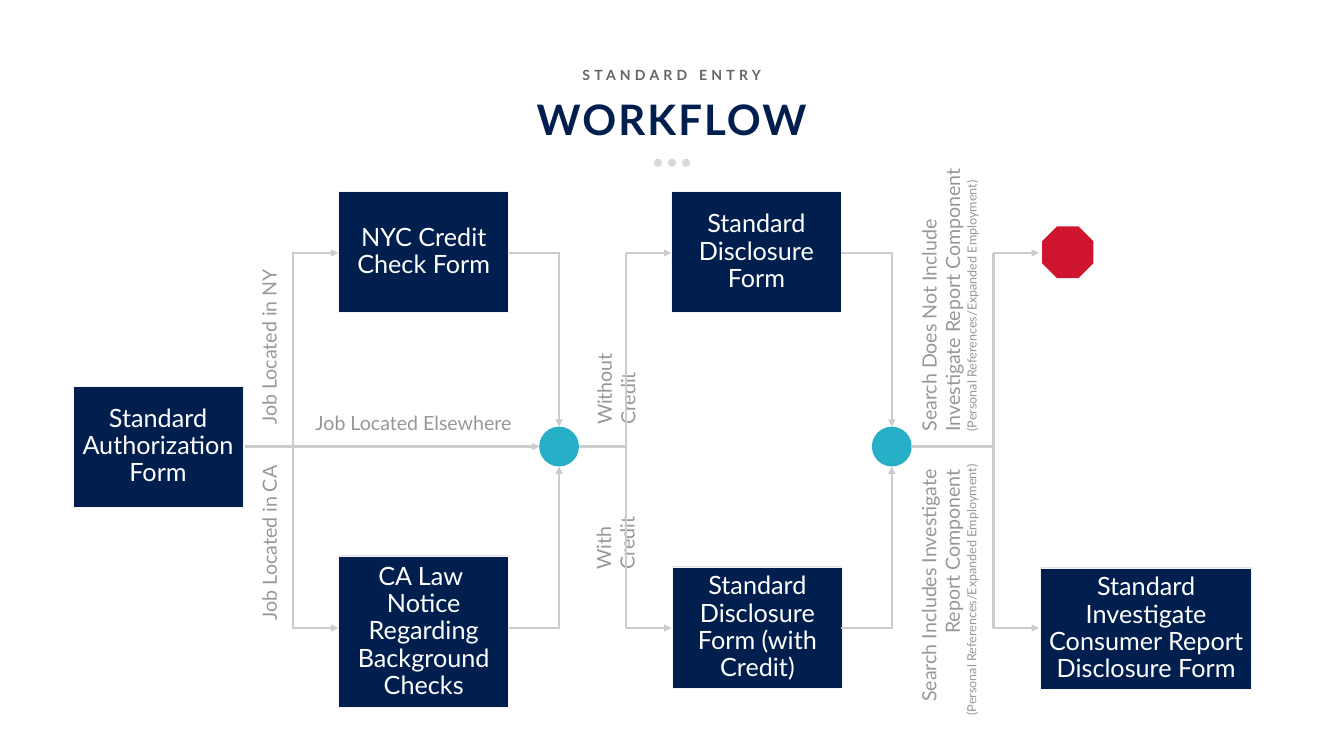
"""Build the standard entry workflow slide."""
import dataclasses

import pptx
import pptx.dml.color
import pptx.enum.shapes
import pptx.enum.text
import pptx.oxml.ns
import pptx.util
from lxml import etree

Inches = pptx.util.Inches
Pt = pptx.util.Pt
Align = pptx.enum.text.PP_ALIGN
Anchor = pptx.enum.text.MSO_ANCHOR
Shape = pptx.enum.shapes.MSO_SHAPE
qn = pptx.oxml.ns.qn


@dataclasses.dataclass(frozen=True)
class Theme:
    font: str = "Lato"
    navy: str = "001F4E"
    teal: str = "26AFC6"
    red: str = "CF142E"
    white: str = "FFFFFF"
    edge: str = "F4F4F4"
    line: str = "CBCCCE"
    dot: str = "D9D9D9"
    kicker: str = "636569"
    label: str = "96989C"
    title_size: float = 60
    kicker_size: float = 20
    box_size: float = 36
    label_size: float = 28
    note_size: float = 18
    line_width: float = 3.5


def rgb(value):
    return pptx.dml.color.RGBColor.from_string(value)


def apply(target, values):
    for name, value in values.items():
        setattr(target, name, value)


class Deck:
    """Hold the theme and the current slide."""

    def __init__(self, theme):
        self.t = theme
        self.prs = pptx.Presentation()
        apply(self.prs, {"slide_width": Inches(26.66), "slide_height": Inches(15)})
        self.s = self.prs.slides.add_slide(self.prs.slide_layouts[5])

    def set_text(self, tf, text, size, color, align=Align.CENTER, bold=False,
                 spacing=0, leading=0.9, margins=(0.1, 0.05, 0.1, 0.05),
                 anchor=Anchor.TOP, note=""):
        left, top, right, bottom = map(Inches, margins)
        apply(tf, {"word_wrap": True, "auto_size": pptx.enum.text.MSO_AUTO_SIZE.NONE,
                   "vertical_anchor": anchor, "margin_left": left, "margin_top": top,
                   "margin_right": right, "margin_bottom": bottom})
        p = tf.paragraphs[0]
        apply(p, {"alignment": align, "line_spacing": leading})
        lines = [(line, size) for line in text.split("\n")]
        if note:
            lines.append((note, self.t.note_size))
        for i, (line, points) in enumerate(lines):
            if i:
                p.add_line_break()
            r = p.add_run()
            r.text = line
            apply(r.font, {"name": self.t.font, "size": Pt(points), "bold": bold})
            r.font.color.rgb = rgb(color)
            if spacing:
                r._r.get_or_add_rPr().set("spc", str(spacing * 100))

    def title(self, text, at):
        sp = self.s.shapes.title
        apply(sp, dict(zip(("left", "top", "width", "height"), map(Inches, at))))
        self.set_text(sp.text_frame, text, self.t.title_size, self.t.navy,
                      bold=True, spacing=3, anchor=Anchor.MIDDLE)

    def kicker(self, text, at):
        sp = self.s.shapes.add_textbox(*map(Inches, at))
        self.set_text(sp.text_frame, text, self.t.kicker_size, self.t.kicker,
                      bold=True, spacing=6, margins=(0.2, 0.1, 0.2, 0.1))

    def shape(self, kind, at, fill, edge=None):
        sp = self.s.shapes.add_shape(kind, *map(Inches, at))
        sp.shadow.inherit = False
        sp.fill.solid()
        sp.fill.fore_color.rgb = rgb(fill)
        if edge:
            sp.line.color.rgb = rgb(edge)
            sp.line.width = Pt(1)
        else:
            sp.line.fill.background()
        return sp

    def box(self, text, left, top, width=3.37, height=2.4):
        sp = self.shape(Shape.RECTANGLE, (left, top, width, height),
                        self.t.navy, self.t.edge)
        self.set_text(sp.text_frame, text, self.t.box_size, self.t.white,
                      margins=(0.03,) * 4, anchor=Anchor.MIDDLE)

    def label(self, text, at, rotation=270, align=Align.LEFT, note=""):
        sp = self.s.shapes.add_textbox(*map(Inches, at))
        sp.rotation = rotation
        right = 0.1 if align == Align.RIGHT else 0
        self.set_text(sp.text_frame, text, self.t.label_size, self.t.label, align,
                      leading=1, margins=(0.1, 0.05, right, 0.05), note=note)

    def line(self, x1, y1, x2, y2, arrow=False):
        sp = self.s.shapes.add_connector(
            pptx.enum.shapes.MSO_CONNECTOR.STRAIGHT, *map(Inches, (x1, y1, x2, y2)))
        sp.line.color.rgb = rgb(self.t.line)
        sp.line.width = Pt(self.t.line_width)
        if arrow:
            etree.SubElement(sp.line._get_or_add_ln(), qn("a:tailEnd"), type="triangle")
        etree.SubElement(sp._element.spPr, qn("a:effectLst"))

    def split(self, x, rails):
        for y in rails:
            self.line(x - 0.01, y, x + 0.9, y, arrow=True)
        self.line(x, rails[0], x, rails[1])

    def merge(self, start, x, middle, rails, radius=0.395):
        self.shape(Shape.OVAL, (x - radius, middle - radius, 2 * radius, 2 * radius),
                   self.t.teal)
        for y, side in zip(rails, (-1, 1)):
            self.line(x, y, x, middle + side * radius, arrow=True)
            self.line(x + 0.02, y, start, y)


def main():
    theme = Theme()
    deck = Deck(theme)
    middle, rails = 8.86, (5.02, 12.46)

    for i in range(3):
        deck.shape(Shape.OVAL, (12.97 + 0.28 * i, 3.15, 0.16, 0.16), theme.dot)
    deck.title("WORKFLOW", (1.83, 1.78, 22.99, 1.28))
    deck.kicker("STANDARD ENTRY", (1.83, 1.26, 22.99, 0.52))

    for box in (
        ("Standard Authorization Form", 1.45, 7.66),
        ("NYC Credit Check Form", 6.72, 3.8),
        ("CA Law \nNotice Regarding Background Checks", 6.72, 11.03, 3.37, 3.01),
        ("Standard Disclosure Form", 13.32, 3.8),
        ("Standard Disclosure Form (with Credit)", 13.34, 11.25),
        ("Standard Investigate Consumer Report Disclosure Form", 20.64, 11.27, 4.19),
    ):
        deck.box(*box)
    deck.shape(Shape.OCTAGON, (20.67, 4.49, 1.02, 1.03), theme.red)

    note = "(Personal References/Expanded Employment)"
    deck.label("Job Located in CA", (3.69, 10.47, 3.3, 0.57))
    deck.label("Job Located in NY", (3.68, 6.58, 3.31, 0.57))
    deck.label("Job Located Elsewhere", (6.16, 8.11, 4.15, 0.57), rotation=0)
    deck.label("With\nCredit", (10.9, 10.04, 2.14, 0.57))
    deck.label("Without\nCredit", (10.63, 6.89, 2.71, 0.57))
    deck.label("Search Does Not Include \nInvestigate Report Component ",
               (16, 5.17, 5.63, 1.35), note=note)
    deck.label("Search Includes Investigate \nReport Component ",
               (16.17, 11.08, 5.28, 1.35), align=Align.RIGHT, note=note)

    deck.line(4.85, middle, 10.7, middle, arrow=True)
    for x in (5.81, 12.42, 19.71):
        deck.split(x, rails)
    for start, x, end in ((10.09, 11.09, 12.42), (16.69, 17.69, 19.71)):
        deck.merge(start, x, middle, rails)
        deck.line(x + 0.39, middle, end, middle)

    deck.prs.save("out.pptx")


if __name__ == "__main__":
    main()
